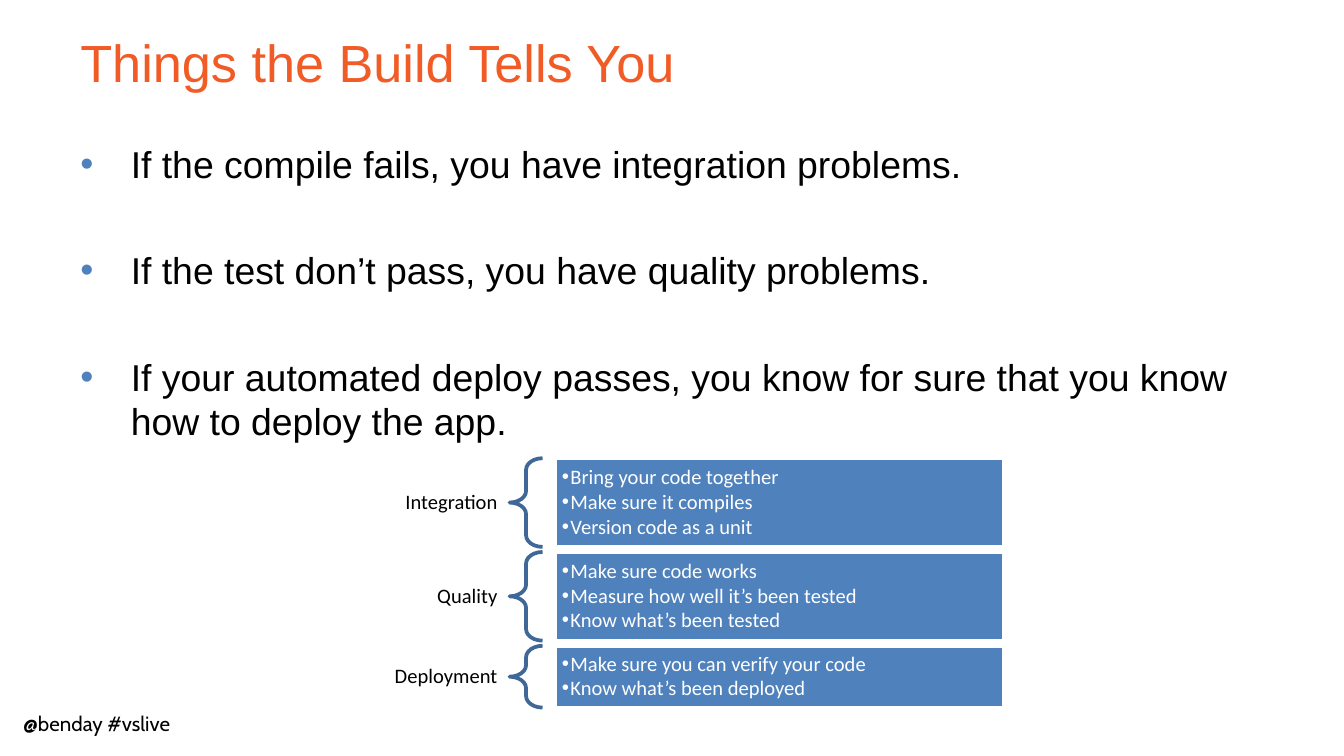
from dataclasses import dataclass

from lxml import etree
from pptx import Presentation
from pptx.dml.color import RGBColor
from pptx.enum.shapes import MSO_SHAPE
from pptx.enum.text import MSO_ANCHOR, PP_ALIGN
from pptx.oxml.ns import qn
from pptx.util import Pt

RECT = MSO_SHAPE.RECTANGLE
BRACE = MSO_SHAPE.LEFT_BRACE
LEFT, RIGHT = PP_ALIGN.LEFT, PP_ALIGN.RIGHT
TOP, MID = MSO_ANCHOR.TOP, MSO_ANCHOR.MIDDLE


@dataclass(frozen=True)
class Theme:
    orange: str = "F15B26"
    blue: str = "4F81BD"
    dark: str = "3F6797"
    black: str = "000000"
    white: str = "FFFFFF"
    main: str = "Arial"
    chart: str = "Calibri"
    foot: str = "Cabin"
    title: int = 28
    body: int = 20
    small: int = 11


T = Theme()

POINTS = [
    "If the compile fails, you have integration problems.",
    "If the test don’t pass, you have quality problems.",
    "If your automated deploy passes, you know for sure that you know "
    "how to deploy the app.",
]
GROUPS = [
    ("Integration", ["Bring your code together", "Make sure it compiles",
                     "Version code as a unit"]),
    ("Quality", ["Make sure code works", "Measure how well it’s been tested",
                 "Know what’s been tested"]),
    ("Deployment", ["Make sure you can verify your code",
                    "Know what’s been deployed"]),
]


def add_dot(para, indent, color):
    """Give a paragraph a round bullet with a hanging indent."""
    props = para._p.get_or_add_pPr()
    props.set("marL", str(Pt(indent)))
    props.set("indent", str(-Pt(indent)))
    tint = etree.SubElement(props, qn("a:buClr"))
    etree.SubElement(tint, qn("a:srgbClr"), val=color)
    etree.SubElement(props, qn("a:buFont"), typeface="Arial")
    etree.SubElement(props, qn("a:buChar"), char="•")


def put_text(shape, lines, *, size, color, font=T.main, align=LEFT, anchor=TOP,
             inset=(7.2, 3.6), wrap=True, indent=0, dot=None,
             before=0, after=0, lead=None):
    """Fill a shape with one paragraph per line."""
    frame = shape.text_frame
    frame.word_wrap = wrap
    frame.vertical_anchor = anchor
    frame.margin_left = frame.margin_right = Pt(inset[0])
    frame.margin_top = frame.margin_bottom = Pt(inset[1])
    for i, line in enumerate(lines):
        para = frame.add_paragraph() if i else frame.paragraphs[0]
        para.alignment = align
        para.space_before = Pt(before if i else 0)
        para.space_after = Pt(after)
        if lead:
            para.line_spacing = lead
        if dot:
            add_dot(para, indent, dot)
        run = para.add_run()
        run.text = line
        run.font.name = font
        run.font.size = Pt(size)
        run.font.color.rgb = RGBColor.from_string(color)


def add_box(slide, left, top, width, height):
    return slide.shapes.add_textbox(Pt(left), Pt(top), Pt(width), Pt(height))


def add_form(slide, kind, left, top, width, height, *, line, fill=None):
    """Add a preset shape with a 2 pt outline."""
    shape = slide.shapes.add_shape(kind, Pt(left), Pt(top), Pt(width), Pt(height))
    shape.shadow.inherit = False
    shape.line.color.rgb = RGBColor.from_string(line)
    shape.line.width = Pt(2)
    if fill:
        shape.fill.solid()
        shape.fill.fore_color.rgb = RGBColor.from_string(fill)
    else:
        shape.fill.background()
    return shape


def add_group(slide, top, height, name, items):
    """Draw one row: label, brace and list."""
    tall = 17.3
    label = add_box(slide, 184.5, top + (height - tall) / 2, 88.5, tall)
    put_text(label, [name], size=T.small, color=T.black, font=T.chart,
             align=RIGHT, anchor=MID, inset=(6.5, 2.2), after=3.85, lead=0.9)
    brace = add_form(slide, BRACE, 273, top, 17.7, height, line=T.dark)
    brace.adjustments[0] = 0.35
    panel = add_form(slide, RECT, 297.5, top, 240.5, height,
                     line=T.white, fill=T.blue)
    put_text(panel, items, size=T.small, color=T.white, font=T.chart,
             anchor=MID, inset=(3.6, 3.6), indent=4.5, dot=T.white,
             after=1.4, lead=0.9)


def main():
    deck = Presentation()
    deck.slide_width, deck.slide_height = Pt(720), Pt(405)
    slide = deck.slides.add_slide(deck.slide_layouts[6])

    # Footer
    put_text(add_box(slide, 5.3, 377.3, 97.2, 20.9), ["@benday #vslive"],
             size=T.small, color=T.black, font=T.foot, wrap=False)

    # Title and main points
    put_text(add_box(slide, 36, 5, 648, 56), ["Things the Build Tells You"],
             size=T.title, color=T.orange, anchor=MID)
    put_text(add_box(slide, 36, 72, 648, 289.5), POINTS, size=T.body,
             color=T.black, indent=27, dot=T.blue, before=33)

    # Rows stacked with an equal gap, as tall as their lists
    top, gap = 245.5, 2.75
    for name, items in GROUPS:
        height = 4.3 + 14.4 * len(items)
        add_group(slide, top, height, name, items)
        top += height + gap

    deck.save("out.pptx")


if __name__ == "__main__":
    main()
